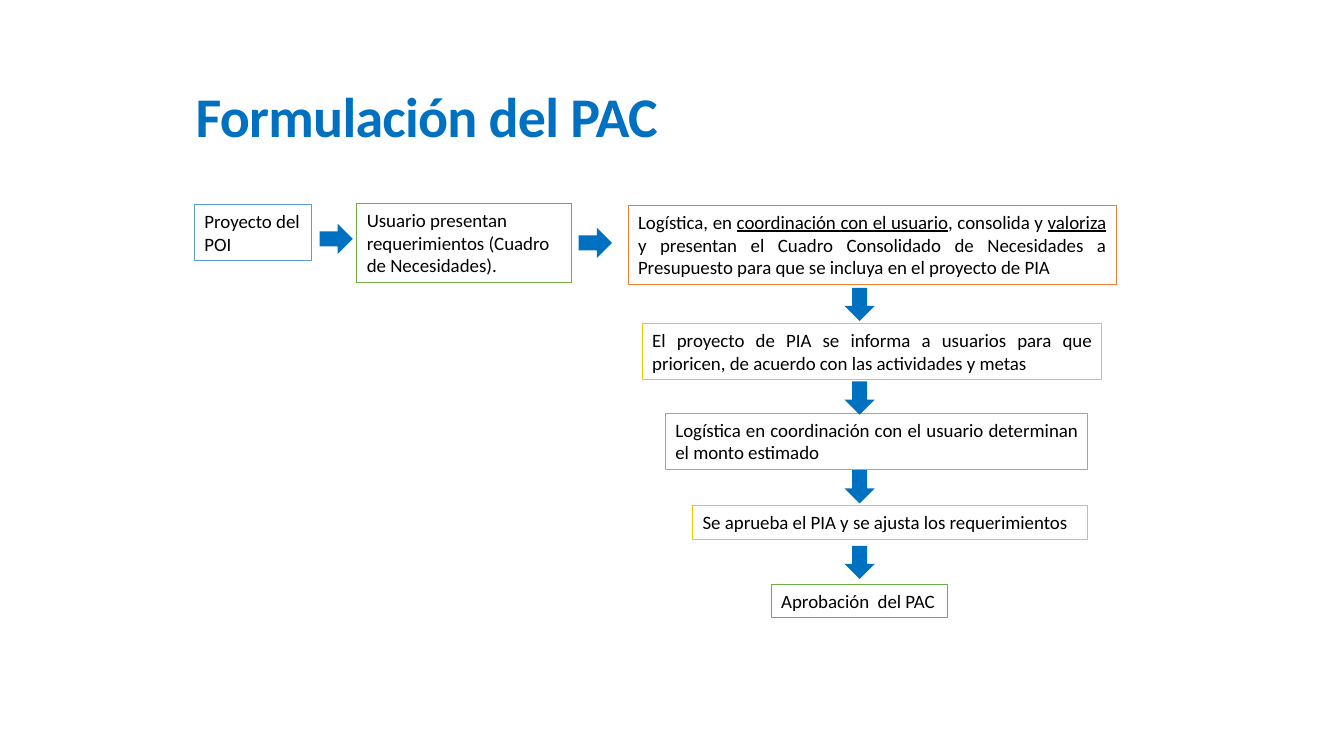
import pptx
import pptx.util
import pptx.dml.color
import pptx.enum.shapes
import pptx.enum.text

SCALE = 9144  # EMU per px, 100 px to the inch
HUES = {
    "white": "FFFFFF", "black": "000000", "blue": "0070C0", "sky": "5B9BD5",
    "green": "70AD47", "orange": "ED7D31", "gold": "FFC000", "gray": "A5A5A5",
}
KIND = pptx.enum.shapes.MSO_SHAPE
ALIGN = pptx.enum.text.PP_ALIGN
ANCHOR = pptx.enum.text.MSO_ANCHOR
FIT = pptx.enum.text.MSO_AUTO_SIZE


def px(count):
    return pptx.util.Emu(count * SCALE)


def hue(name):
    return pptx.dml.color.RGBColor.from_string(HUES[name])


def apply(target, values):
    for name, value in values.items():
        setattr(target, name, value)


def place(shape, area):
    apply(shape, dict(zip(("left", "top", "width", "height"), map(px, area))))


class Flow:
    face = "Calibri"
    body = {"name": face, "size": pptx.util.Pt(13.5)}
    head = {"name": face, "size": pptx.util.Pt(40), "bold": True}

    def __init__(self, deck):
        self.slide = deck.slides.add_slide(deck.slide_layouts[5])

    def title(self, text, area):
        shape = self.slide.shapes.title
        place(shape, area)
        frame = shape.text_frame
        apply(frame, {
            "auto_size": FIT.NONE, "word_wrap": True,
            "vertical_anchor": ANCHOR.BOTTOM,
            "margin_left": px(7), "margin_right": px(7),
            "margin_top": px(4), "margin_bottom": px(4),
        })
        line = frame.paragraphs[0]
        apply(line, {"alignment": ALIGN.LEFT, "line_spacing": 0.85})
        run = line.add_run()
        run.text = text
        apply(run.font, self.head)
        run.font.color.rgb = hue("blue")
        run.font._element.set("spc", "-50")

    def shape(self, kind, area, fill):
        shape = self.slide.shapes.add_shape(kind, *map(px, area))
        shape.shadow.inherit = False
        shape.fill.solid()
        shape.fill.fore_color.rgb = hue(fill)
        return shape

    def box(self, area, edge, text, align=ALIGN.JUSTIFY, wrap=True):
        """Add a framed step; text between underscores is underlined."""
        shape = self.shape(KIND.RECTANGLE, area, "white")
        shape.line.color.rgb = hue(edge)
        shape.line.width = pptx.util.Pt(0.75)
        frame = shape.text_frame
        apply(frame, {
            "word_wrap": wrap, "vertical_anchor": ANCHOR.TOP,
            "auto_size": FIT.SHAPE_TO_FIT_TEXT,
        })
        line = frame.paragraphs[0]
        line.alignment = align
        for index, part in enumerate(text.split("_")):
            run = line.add_run()
            run.text = part
            apply(run.font, self.body)
            run.font.color.rgb = hue("black")
            if index % 2:
                run.font.underline = True

    def arrow(self, left, top, turn=0):
        shape = self.shape(KIND.RIGHT_ARROW, (left, top, 33, 30), "blue")
        shape.line.fill.background()
        shape.rotation = turn


def main():
    deck = pptx.Presentation()
    apply(deck, {"slide_width": px(1333), "slide_height": px(750)})
    flow = Flow(deck)
    flow.title("Formulación del PAC", (187, 105, 726, 47))

    flow.box((193, 203, 116, 56), "sky", "Proyecto del POI", ALIGN.LEFT)
    flow.box((354, 202, 213, 78), "green",
             "Usuario presentan requerimientos (Cuadro de Necesidades).",
             ALIGN.LEFT)
    flow.box((623, 204, 484, 78), "orange",
             "Logística, en _coordinación con el usuario_, consolida y "
             "_valoriza_ y presentan el Cuadro Consolidado de Necesidades a "
             "Presupuesto para que se incluya en el proyecto de PIA")
    flow.box((637, 321, 456, 56), "gold",
             "El proyecto de PIA se informa a usuarios para que prioricen, "
             "de acuerdo con las actividades y metas")
    flow.box((660, 410, 419, 56), "gray",
             "Logística en coordinación con el usuario determinan el monto "
             "estimado")
    flow.box((687, 502, 392, 33), "gold",
             "Se aprueba el PIA y se ajusta los requerimientos")
    flow.box((765, 580, 175, 33), "green", "Aprobación  del PAC",
             ALIGN.LEFT, wrap=False)

    for left, top in ((317, 222), (574, 226)):
        flow.arrow(left, top)
    for top in (287, 380, 468, 543):
        flow.arrow(836, top, turn=90)

    deck.save("out.pptx")


if __name__ == "__main__":
    main()
